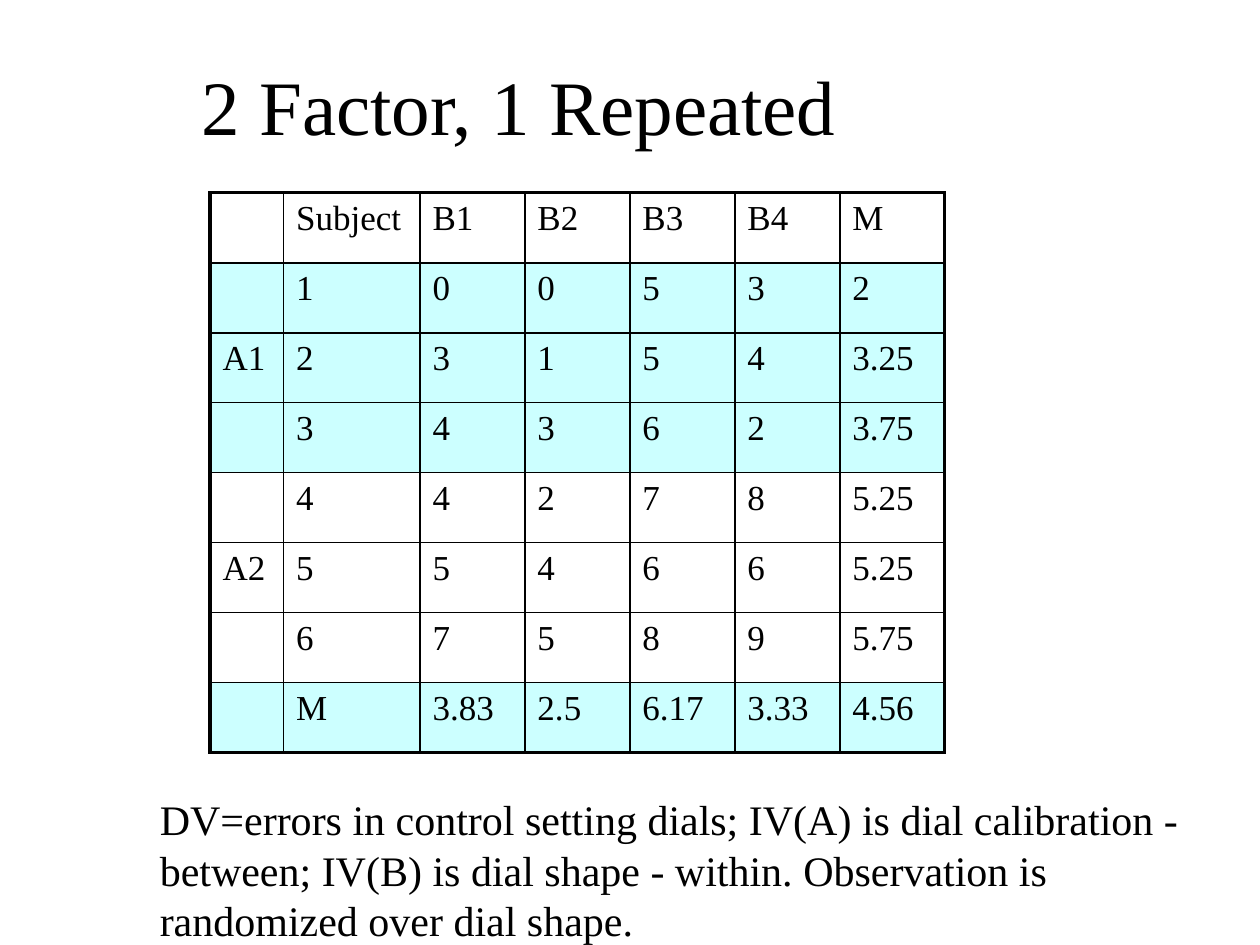
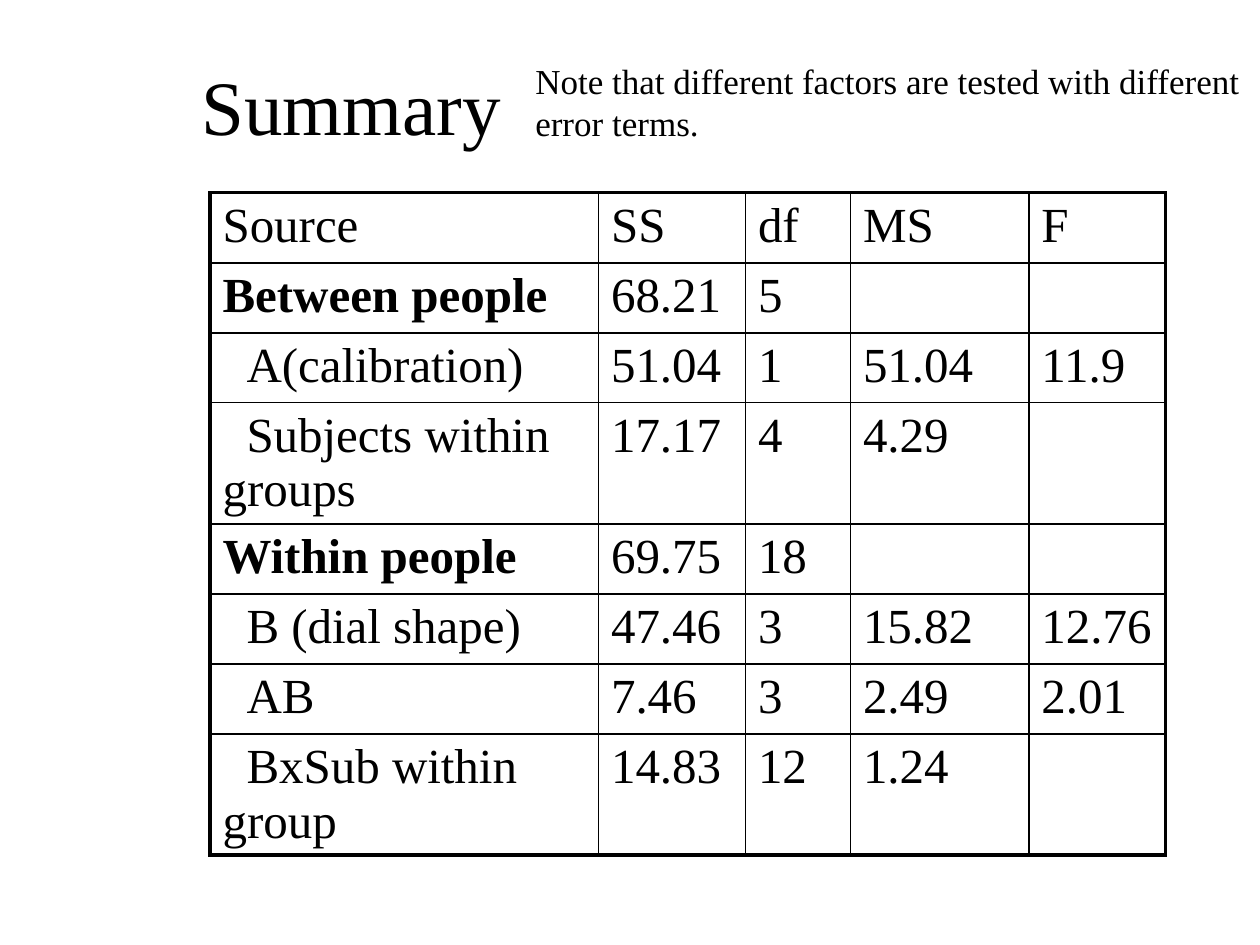
"""Build two slides on a two-factor design with one repeated factor."""
import pptx
import pptx.dml.color
import pptx.enum.text
import pptx.oxml
import pptx.oxml.ns
import pptx.util

Inches = pptx.util.Inches
Pt = pptx.util.Pt

COLOURS = {"ink": "000000", "band": "CCFFFF"}
FONT = "Times New Roman"
COLUMN_UNIT = Inches(1) // 12
TABLE_LEFT = 20 * COLUMN_UNIT
ROW_HEIGHT = Inches(5) // 9
TALL_ROW = Inches(0.95)


def colour(name):
    return pptx.dml.color.RGBColor.from_string(COLOURS[name])


def write(frame, text, size=20, bold=False, indent=None):
    paragraph = frame.paragraphs[0]
    paragraph.alignment = pptx.enum.text.PP_ALIGN.LEFT
    if indent:
        properties = paragraph._p.get_or_add_pPr()
        properties.set("marL", "0")
        properties.set("indent", str(indent))
    run = paragraph.add_run()
    run.text = text
    run.font.name = FONT
    run.font.size = Pt(size)
    run.font.bold = bold
    run.font.color.rgb = colour("ink")


class Deck:
    """Hold the presentation, its style and the current slide."""

    def __init__(self):
        self.presentation = pptx.Presentation()
        self.presentation.slide_width = Inches(10)
        self.presentation.slide_height = Inches(7.5)
        self.slide = None

    def add_slide(self, heading):
        layout = self.presentation.slide_layouts.get_by_name("Title Only")
        self.slide = self.presentation.slides.add_slide(layout)
        title = self.slide.shapes.title
        title.left, title.top = Inches(1.5), Inches(0.33)
        title.width, title.height = Inches(7.75), Inches(1)
        frame = title.text_frame
        frame.auto_size = pptx.enum.text.MSO_AUTO_SIZE.NONE
        frame.vertical_anchor = pptx.enum.text.MSO_ANCHOR.MIDDLE
        write(frame, heading, size=44)

    def add_note(self, text, left, top, width, height, size):
        note = self.slide.shapes.add_textbox(
            Inches(left), Inches(top), Inches(width), Inches(height))
        note.text_frame.word_wrap = True
        note.text_frame.auto_size = pptx.enum.text.MSO_AUTO_SIZE.SHAPE_TO_FIT_TEXT
        write(note.text_frame, text, size=size)

    def add_border(self, cell, side, width):
        line = pptx.oxml.parse_xml(
            f'<a:ln{side} {pptx.oxml.ns.nsdecls("a")} w="{Pt(width)}">'
            f'<a:solidFill><a:srgbClr val="{COLOURS["ink"]}"/></a:solidFill>'
            f'</a:ln{side}>')
        cell._tc.get_or_add_tcPr().append(line)

    def add_table(self, rows, column_units, size, banded=(), tall=(),
                  bold=(), indented=()):
        widths = [units * COLUMN_UNIT for units in column_units]
        heights = [TALL_ROW if number in tall else ROW_HEIGHT
                   for number in range(len(rows))]
        table = self.slide.shapes.add_table(
            len(rows), len(widths), TABLE_LEFT, Inches(1.53),
            sum(widths), sum(heights)).table
        table.first_row = table.horz_banding = False
        for column, width in zip(table.columns, widths):
            column.width = width
        last_row, last_column = len(rows) - 1, len(widths) - 1
        for r, values in enumerate(rows):
            table.rows[r].height = heights[r]
            for c, text in enumerate(values):
                cell = table.cell(r, c)
                outer = {"L": c == 0, "R": c == last_column,
                         "T": r == 0, "B": r == last_row}
                for side, on_edge in outer.items():
                    self.add_border(cell, side, 2.25 if on_edge else 1)
                if r in banded:
                    cell.fill.solid()
                    cell.fill.fore_color.rgb = colour("band")
                else:
                    cell.fill.background()
                if text:
                    write(cell.text_frame, text, size=size,
                          bold=c == 0 and r in bold,
                          indent=Inches(0.19) if c == 0 and r in indented else None)

    def save(self):
        self.presentation.save("out.pptx")


ERRORS = [
    ("", "Subject", "B1", "B2", "B3", "B4", "M"),
    ("", "1", "0", "0", "5", "3", "2"),
    ("A1", "2", "3", "1", "5", "4", "3.25"),
    ("", "3", "4", "3", "6", "2", "3.75"),
    ("", "4", "4", "2", "7", "8", "5.25"),
    ("A2", "5", "5", "4", "6", "6", "5.25"),
    ("", "6", "7", "5", "8", "9", "5.75"),
    ("", "M", "3.83", "2.5", "6.17", "3.33", "4.56"),
]

VARIANCE = [
    ("Source", "SS", "df", "MS", "F"),
    ("Between people", "68.21", "5", "", ""),
    ("A(calibration)", "51.04", "1", "51.04", "11.9"),
    ("Subjects within groups", "17.17", "4", "4.29", ""),
    ("Within people", "69.75", "18", "", ""),
    ("B (dial shape)", "47.46", "3", "15.82", "12.76"),
    ("AB", "7.46", "3", "2.49", "2.01"),
    ("BxSub within group", "14.83", "12", "1.24", ""),
]


def main():
    deck = Deck()

    deck.add_slide("2 Factor, 1 Repeated")
    deck.add_table(ERRORS, (7, 13, 10, 10, 10, 10, 10), size=20,
                   banded=(1, 2, 3, 7))
    deck.add_note("DV=errors in control setting dials; IV(A) is dial calibration - "
                  "between; IV(B) is dial shape - within. Observation is "
                  "randomized over dial shape.", 1.17, 6.25, 8.5, 1.3, size=24)

    deck.add_slide("Summary")
    deck.add_table(VARIANCE, (37, 14, 10, 17, 13), size=28, tall=(3, 7),
                   bold=(1, 4), indented=(2, 3, 5, 6, 7))
    deck.add_note("Note that different factors are tested with different error terms.",
                  4.15, 0.42, 5.85, 0.77, size=20)

    deck.save()


if __name__ == "__main__":
    main()
